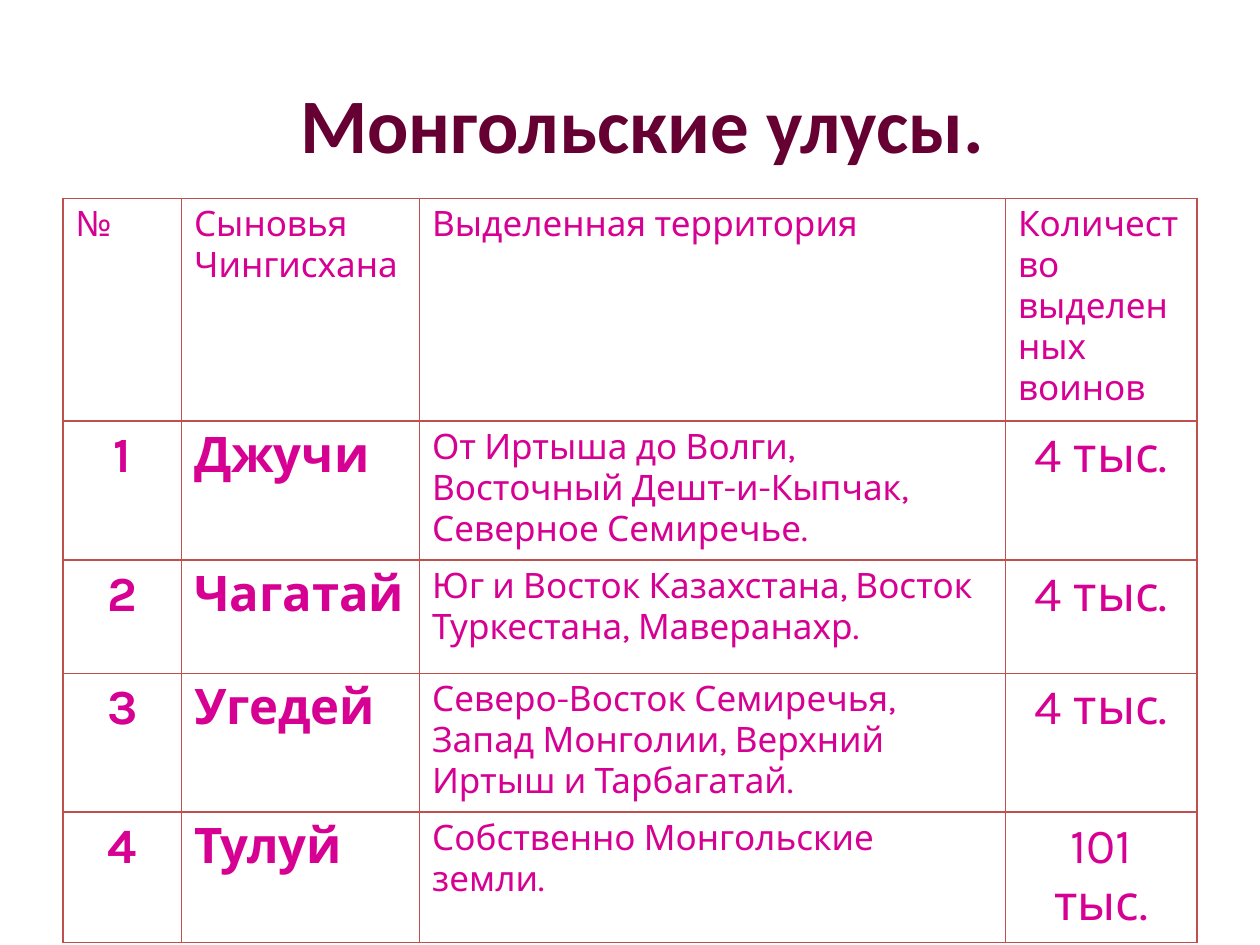
from lxml.etree import SubElement
from pptx import Presentation
from pptx.dml.color import RGBColor
from pptx.enum.text import MSO_ANCHOR, PP_ALIGN
from pptx.oxml import parse_xml
from pptx.oxml.ns import nsdecls, qn
from pptx.util import Inches, Pt

PLUM = RGBColor(0x66, 0x00, 0x33)
MAGENTA = RGBColor(0xD6, 0x00, 0x93)
BRICK = RGBColor(0xC0, 0x50, 0x4D)

SLIDE_WIDTH, SLIDE_HEIGHT = Inches(10), Inches(7.5)
COLUMN_SHARES = (0.094, 0.189, 0.465, 0.152)
ROW_SHARE = 0.12

HEADER = ("№", "Сыновья Чингисхана", "Выделенная территория", "Количество выделенных воинов")
ULUSES = (
    ("1", "Джучи", "От Иртыша до Волги, Восточный Дешт-и-Кыпчак, Северное Семиречье.", "4 тыс."),
    ("2", "Чагатай", "Юг и Восток Казахстана, Восток Туркестана, Маверанахр.", "4 тыс."),
    ("3", "Угедей", "Северо-Восток Семиречья, Запад Монголии, Верхний Иртыш и Тарбагатай.", "4 тыс."),
    ("4", "Тулуй", "Собственно Монгольские земли.", "101 тыс."),
)
HEADER_STYLES = ((20, False, PP_ALIGN.LEFT),) * len(HEADER)
ULUS_STYLES = (
    (28, True, PP_ALIGN.CENTER),
    (28, True, PP_ALIGN.LEFT),
    (20, False, PP_ALIGN.LEFT),
    (28, False, PP_ALIGN.CENTER),
)


def share_box(left, top, width, height):
    """Turn shares of the slide into lengths."""
    return (int(SLIDE_WIDTH * left), int(SLIDE_HEIGHT * top),
            int(SLIDE_WIDTH * width), int(SLIDE_HEIGHT * height))


def write_text(text_frame, text, font_name, color, size, bold, alignment):
    """Fill a text frame with one formatted paragraph."""
    text_frame.text = text
    paragraph = text_frame.paragraphs[0]
    paragraph.alignment = alignment
    font = paragraph.runs[0].font
    font.name, font.size, font.bold = font_name, Pt(size), bold
    font.color.rgb = color


def outline_cell(cell):
    """Draw a thin line on all four sides of a cell."""
    properties = cell._tc.get_or_add_tcPr()
    for position, side in enumerate(("lnL", "lnR", "lnT", "lnB")):
        line = parse_xml(f'<a:{side} {nsdecls("a")} w="{Pt(1)}"/>')
        fill = SubElement(line, qn("a:solidFill"))
        SubElement(fill, qn("a:srgbClr"), val=str(BRICK))
        properties.insert(position, line)


def add_title(slide, box):
    """Place the slide heading in the box."""
    text_frame = slide.shapes.add_textbox(*box).text_frame
    text_frame.word_wrap = True
    text_frame.vertical_anchor = MSO_ANCHOR.MIDDLE
    write_text(text_frame, "Монгольские улусы.", "Calibri", PLUM, 44, True, PP_ALIGN.CENTER)


def add_ulus_table(slide, box):
    """Place the table of uluses in the box."""
    rows = (HEADER, *ULUSES)
    table = slide.shapes.add_table(len(rows), len(HEADER), *box).table
    table.first_row = table.horz_banding = False
    for column, share in zip(table.columns, COLUMN_SHARES):
        column.width = int(SLIDE_WIDTH * share)
    for row_index, texts in enumerate(rows):
        styles = ULUS_STYLES if row_index else HEADER_STYLES
        for column_index, (text, style) in enumerate(zip(texts, styles)):
            cell = table.cell(row_index, column_index)
            cell.fill.background()
            outline_cell(cell)
            write_text(cell.text_frame, text, "Karla", MAGENTA, *style)


def main():
    """Build and save the presentation."""
    presentation = Presentation()
    presentation.slide_width, presentation.slide_height = SLIDE_WIDTH, SLIDE_HEIGHT
    slide = presentation.slides.add_slide(presentation.slide_layouts[6])
    add_title(slide, share_box(0.06, 0.03, 0.9, 0.2))
    add_ulus_table(slide, share_box(0.05, 0.21, sum(COLUMN_SHARES), ROW_SHARE * (len(ULUSES) + 1)))
    presentation.save("out.pptx")


if __name__ == "__main__":
    main()
